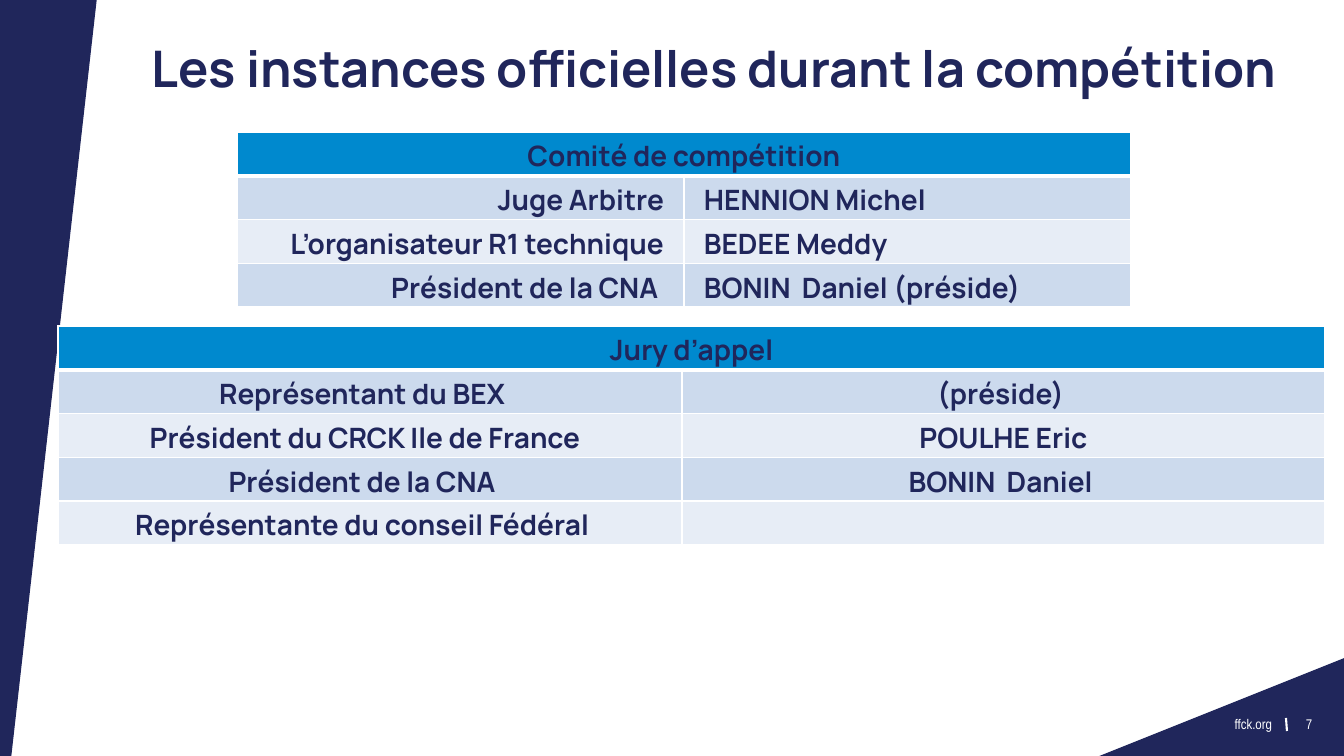
from lxml import etree
from pptx import Presentation
from pptx.dml.color import RGBColor
from pptx.enum.shapes import MSO_CONNECTOR
from pptx.enum.text import MSO_ANCHOR, MSO_AUTO_SIZE, PP_ALIGN
from pptx.oxml import parse_xml
from pptx.oxml.ns import nsdecls, qn
from pptx.util import Pt

LEFT, CENTER, RIGHT = PP_ALIGN.LEFT, PP_ALIGN.CENTER, PP_ALIGN.RIGHT
STRAIGHT = MSO_CONNECTOR.STRAIGHT
TOP, NO_FIT = MSO_ANCHOR.TOP, MSO_AUTO_SIZE.NONE
PX = 914400 / 100.8
NAVY, BLUE, PALE, PALER, WHITE = "20265B", "0089CE", "CCDAED", "E7EDF6", "FFFFFF"
NARROW, WIDE = 10, 20
ROW_HEIGHT = 41


def px(*lengths):
    return [round(length * PX) for length in lengths]


def write(paragraph, text, font, size, color, align, bold=False):
    paragraph.alignment = align
    run = paragraph.add_run()
    run.text = text
    run.font.name, run.font.size, run.font.bold = font, Pt(size), bold
    run.font.color.rgb = RGBColor.from_string(color)


prs = Presentation()
prs.slide_width, prs.slide_height = px(1344, 756)
slide = prs.slides.add_slide(prs.slide_layouts[5])
shapes = slide.shapes

# Navy side band and bottom corner
left_band = [(97, -3), (-2, -3), (-1, 759), (11, 759)]
corner = [(1347, 657), (1092, 759), (1347, 758)]
for outline in (left_band, corner):
    builder = shapes.build_freeform(*outline[0], scale=PX)
    builder.add_line_segments(outline[1:], close=True)
    decoration = builder.convert_to_shape()
    decoration.shadow.inherit = False
    decoration.fill.solid()
    decoration.fill.fore_color.rgb = RGBColor.from_string(NAVY)
    decoration.line.fill.background()

# Footer
for text, box, left_inset, right_inset, align in (
    ("7", (1286, 711, 71, 27), WIDE, NARROW, LEFT),
    ("ffck.org", (1196, 711, 96, 27), NARROW, WIDE, RIGHT),
):
    footer = shapes.add_textbox(*px(*box)).text_frame
    footer.word_wrap = True
    footer.margin_left, footer.margin_right = px(left_inset, right_inset)
    write(footer.paragraphs[0], text, "Arial Narrow", 10, WHITE, align)

separator = shapes.add_connector(STRAIGHT, *px(1286, 718, 1287, 731))
separator.line.color.rgb = RGBColor.from_string(WHITE)
separator.line.width = Pt(1.5)
etree.SubElement(separator._element.spPr, qn("a:effectLst"))

# Tables: place, column widths, alignments, right inset of the names, heading, rows
committee = ((237, 132), (447, 447), (RIGHT, LEFT), NARROW, "Comité de compétition", [
    ("Juge Arbitre", "HENNION Michel"),
    ("L’organisateur R1 technique", "BEDEE Meddy"),
    ("Président de la CNA ", "BONIN  Daniel (préside)"),
])
jury = ((58, 326), (624, 643), (CENTER, CENTER), WIDE, "Jury d’appel", [
    ("Représentant du BEX ", "(préside) "),
    ("Président du CRCK Ile de France", "POULHE Eric"),
    ("Président de la CNA ", "BONIN  Daniel "),
    ("Représentante du conseil Fédéral ", ""),
])
for place, widths, aligns, name_inset, heading, members in (committee, jury):
    rows = [(heading, ""), *members]
    size = sum(widths), ROW_HEIGHT * len(rows)
    table = shapes.add_table(len(rows), 2, *px(*place, *size)).table
    for column, width in zip(table.columns, px(*widths)):
        column.width = width
    table.cell(0, 0).merge(table.cell(0, 1))

    for r, row in enumerate(rows):
        for c, text in enumerate(row):
            cell = table.cell(r, c)
            borders = {"L": 1, "R": 1, "T": 3 if r == 1 else 1, "B": 3 if r == 0 else 1}
            for side, points in borders.items():
                cell._tc.get_or_add_tcPr().append(parse_xml(
                    f'<a:ln{side} {nsdecls("a")} w="{Pt(points)}"><a:solidFill>'
                    f'<a:srgbClr val="{WHITE}"/></a:solidFill></a:ln{side}>'))
            cell.fill.solid()
            fill = BLUE if r == 0 else PALE if r % 2 else PALER
            cell.fill.fore_color.rgb = RGBColor.from_string(fill)
            if r > 0:
                insets = (NARROW, WIDE) if c == 0 else (WIDE, name_inset)
                cell.margin_left, cell.margin_right = px(*insets)
            if text:
                align = aligns[c] if r else CENTER
                write(cell.text_frame.paragraphs[0], text, "Manrope", 20, NAVY, align, True)

# Title
title = shapes.title
title.left, title.top, title.width, title.height = px(115, 32, 1198, 72)
title.text_frame.vertical_anchor = TOP
title.text_frame.auto_size = NO_FIT
write(title.text_frame.paragraphs[0], "Les instances officielles durant la compétition",
      "Manrope", 36, NAVY, CENTER, True)

prs.save("out.pptx")
